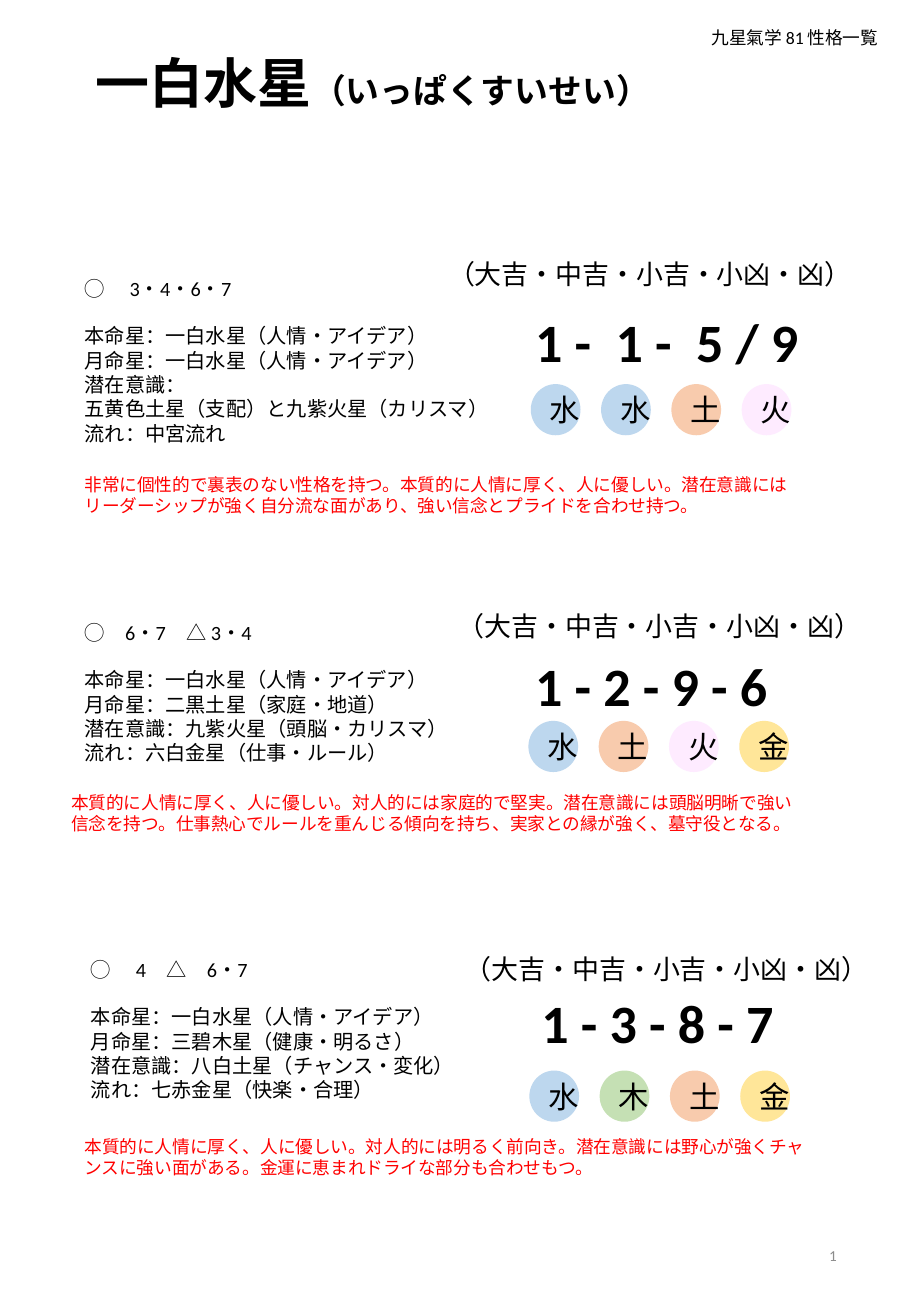
from dataclasses import dataclass

from lxml import etree
from pptx import Presentation
from pptx.dml.color import RGBColor
from pptx.enum import shapes, text
from pptx.oxml import ns
from pptx.util import Cm, Pt


@dataclass(frozen=True)
class Theme:
    font: str = "Calibri"
    ink: str = "000000"
    comment: str = "FF0000"
    muted: str = "8C8C8C"
    title: float = 32
    reading: float = 20
    element: float = 18
    rating: float = 16
    detail: float = 12
    small: float = 10.5
    page: float = 9


@dataclass(frozen=True)
class Box:
    left: float
    top: float
    width: float
    height: float

    def lengths(self) -> tuple:
        return Cm(self.left), Cm(self.top), Cm(self.width), Cm(self.height)


@dataclass(frozen=True)
class Reading:
    """One star combination; every position is (left, top) in cm."""
    marks: str
    stars: tuple
    numbers: str
    elements: str
    comment: str
    detail_at: tuple
    rating_at: tuple
    elements_at: tuple
    comment_at: tuple


THEME = Theme()
RATING = "（大吉・中吉・小吉・小凶・凶）"
ELEMENT_FILLS = {"水": "BDD7EE", "土": "F8CBAD", "火": "FEEBFF",
                 "金": "FFE699", "木": "C5E0B4"}
ELEMENT_STEP = 1.47
NUMBERS_OFFSET = (9.42, 0.67)
MARKS_GAP = 13.5

READINGS = [
    Reading("◯　 3・4・6・7",
            ("本命星：一白水星（人情・アイデア）", "月命星：一白水星（人情・アイデア）",
             "潜在意識：", "五黄色土星（支配）と九紫火星（カリスマ）", "流れ：中宮流れ"),
            "1 -  1 -  5 / 9", "水水土火",
            "非常に個性的で裏表のない性格を持つ。本質的に人情に厚く、人に優しい。"
            "潜在意識にはリーダーシップが強く自分流な面があり、強い信念とプライドを合わせ持つ。",
            (1.52, 5.66), (9.12, 5.26), (11.1, 8.03), (1.52, 9.78)),
    Reading("◯　6・7　△ 3・4",
            ("本命星：一白水星（人情・アイデア）", "月命星：二黒土星（家庭・地道）",
             "潜在意識：九紫火星（頭脳・カリスマ）", "流れ：六白金星（仕事・ルール）"),
            "1 - 2 - 9 - 6", "水土火金",
            "本質的に人情に厚く、人に優しい。対人的には家庭的で堅実。"
            "潜在意識には頭脳明晰で強い信念を持つ。"
            "仕事熱心でルールを重んじる傾向を持ち、実家との縁が強く、墓守役となる。",
            (1.52, 12.85), (9.32, 12.62), (11.05, 15.07), (1.24, 16.43)),
    Reading("◯　 4　△　6・7",
            ("本命星：一白水星（人情・アイデア）", "月命星：三碧木星（健康・明るさ）",
             "潜在意識：八白土星（チャンス・変化）", "流れ：七赤金星（快楽・合理）"),
            "1 - 3 - 8 - 7", "水木土金",
            "本質的に人情に厚く、人に優しい。対人的には明るく前向き。"
            "潜在意識には野心が強くチャンスに強い面がある。"
            "金運に恵まれドライな部分も合わせもつ。",
            (1.65, 19.89), (9.47, 19.79), (11.07, 22.38), (1.52, 23.62)),
]


def style(font, size: float, color: str = THEME.ink, bold: bool = False) -> None:
    font.name = THEME.font
    font.size = Pt(size)
    font.bold = bold
    font.color.rgb = RGBColor.from_string(color)


def add_text(slide, box: Box, lines: tuple, size: float,
             color: str = THEME.ink, bold: bool = False):
    frame = slide.shapes.add_textbox(*box.lengths()).text_frame
    frame.word_wrap = True
    frame.text = "\n".join(lines)
    for paragraph in frame.paragraphs:
        style(paragraph.font, size, color, bold)
    return frame


def add_title(slide) -> None:
    title = slide.shapes.title
    title.left, title.top, title.width, title.height = Box(1.75, 0.91, 17.3, 1.63).lengths()
    frame = title.text_frame
    frame.word_wrap = True
    frame.auto_size = text.MSO_AUTO_SIZE.NONE
    frame.vertical_anchor = text.MSO_ANCHOR.TOP
    heading = frame.paragraphs[0]
    heading.alignment = text.PP_ALIGN.LEFT
    for words, size in (("一白水星", THEME.title), ("（いっぱくすいせい）", THEME.reading)):
        run = heading.add_run()
        run.text = words
        style(run.font, size, bold=True)


def add_page_number(slide) -> None:
    """Add a live slide-number field at the lower right."""
    frame = add_text(slide, Box(13.46, 25.5, 4.29, 1.47), ("1",), THEME.page, THEME.muted)
    frame.vertical_anchor = text.MSO_ANCHOR.MIDDLE
    number = frame.paragraphs[0]
    number.alignment = text.PP_ALIGN.RIGHT
    run = number.runs[0]
    style(run.font, THEME.page, THEME.muted)
    field = run._r
    field.tag = ns.qn("a:fld")
    field.set("id", "{B6F15528-21DE-4FAA-801E-634DDDAF4B2B}")
    field.set("type", "slidenum")
    etree.cleanup_namespaces(field)


def add_element(slide, element: str, left: float, top: float) -> None:
    circle = slide.shapes.add_shape(shapes.MSO_SHAPE.OVAL,
                                    *Box(left, top, 1.04, 1.07).lengths())
    circle.shadow.inherit = False
    circle.fill.solid()
    circle.fill.fore_color.rgb = RGBColor.from_string(ELEMENT_FILLS[element])
    circle.line.fill.background()
    frame = circle.text_frame
    frame.text = element
    frame.vertical_anchor = text.MSO_ANCHOR.MIDDLE
    frame.paragraphs[0].alignment = text.PP_ALIGN.CENTER
    style(frame.paragraphs[0].font, THEME.element)


def add_reading(slide, reading: Reading) -> None:
    detail = add_text(slide, Box(*reading.detail_at, 9.04, 3.84),
                      (reading.marks, *reading.stars), THEME.detail)
    detail.paragraphs[0].space_after = Pt(MARKS_GAP)

    numbers_at = (at + offset for at, offset in zip(reading.detail_at, NUMBERS_OFFSET))
    add_text(slide, Box(*numbers_at, 6.4, 1.63), (reading.numbers,), THEME.title, bold=True)
    add_text(slide, Box(*reading.comment_at, 15.9, 1.14), (reading.comment,),
             THEME.small, THEME.comment)
    left, top = reading.elements_at
    for index, element in enumerate(reading.elements):
        add_element(slide, element, left + index * ELEMENT_STEP, top)
    add_text(slide, Box(*reading.rating_at, 9.07, 0.94), (RATING,), THEME.rating)


def main() -> None:
    deck = Presentation()
    deck.slide_width, deck.slide_height = Cm(19.05), Cm(27.51)
    slide = deck.slides.add_slide(deck.slide_layouts.get_by_name("Title Only"))
    add_title(slide)
    add_text(slide, Box(14.63, 0.43, 4.06, 0.71), ("九星氣学 81 性格一覧",), THEME.small)
    add_page_number(slide)
    for reading in READINGS:
        add_reading(slide, reading)
    deck.save("out.pptx")


if __name__ == "__main__":
    main()
